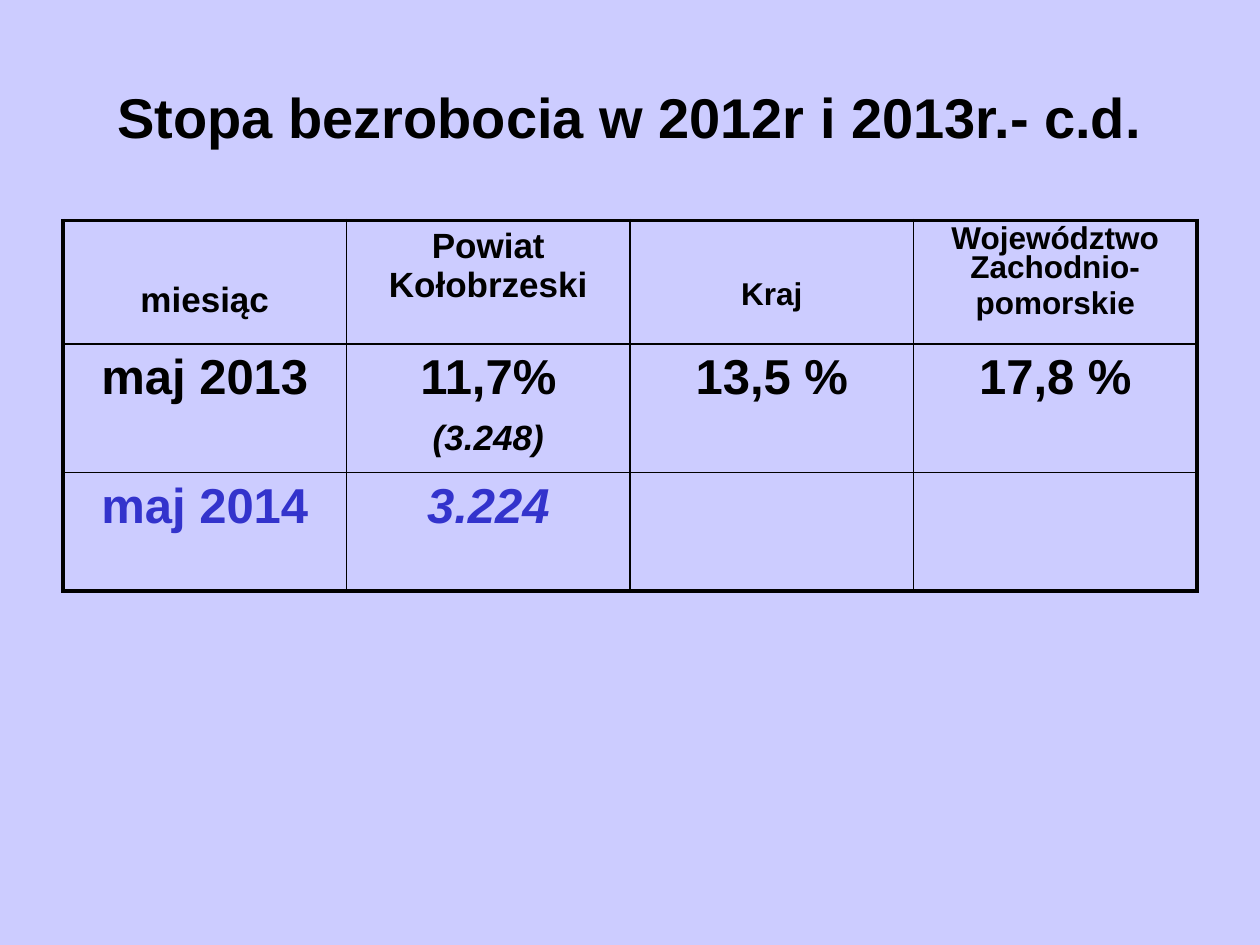
from dataclasses import dataclass

from lxml.etree import SubElement
from pptx import Presentation
from pptx.dml.color import RGBColor
from pptx.enum.text import MSO_ANCHOR, PP_ALIGN
from pptx.oxml.ns import qn
from pptx.util import Inches, Pt


@dataclass(frozen=True)
class Theme:
    font: str = "Arial"
    background: str = "CCCCFF"
    ink: str = "000000"
    accent: str = "3333CC"
    title: int = 32
    figure: int = 28
    label: int = 20
    small_label: int = 18
    outer_line: float = 2.25
    inner_line: float = 1


@dataclass(frozen=True)
class Line:
    text: str
    size: int
    italic: bool = False
    color: str = Theme.ink
    before: float = 8
    spacing: float = 1


THEME = Theme()


def write_lines(text_frame, lines):
    """Fill a text frame with centred bold paragraphs."""
    for index, line in enumerate(lines):
        paragraph = text_frame.paragraphs[0] if index == 0 else text_frame.add_paragraph()
        paragraph.text = line.text
        paragraph.alignment = PP_ALIGN.CENTER
        paragraph.space_before = Pt(line.before)
        paragraph.line_spacing = line.spacing
        font = paragraph.runs[0].font
        font.name = THEME.font
        font.size = Pt(line.size)
        font.bold = True
        font.italic = line.italic
        font.color.rgb = RGBColor.from_string(line.color)


def add_title(slide, text):
    shape = slide.shapes.add_textbox(Inches(0.5), Inches(0.14), Inches(9), Inches(1.57))
    text_frame = shape.text_frame
    text_frame.word_wrap = True
    text_frame.vertical_anchor = MSO_ANCHOR.MIDDLE
    write_lines(text_frame, [Line(text, THEME.title, before=0)])


def set_borders(cell, widths):
    """Draw the cell's sides; widths maps L, R, T, B to points."""
    properties = cell._tc.get_or_add_tcPr()
    for side in "LRTB":
        border = SubElement(properties, qn(f"a:ln{side}"), w=str(Pt(widths[side])))
        fill = SubElement(border, qn("a:solidFill"))
        SubElement(fill, qn("a:srgbClr"), val=THEME.ink)


def add_rate_table(slide, rows, heights, header_tops):
    row_count, column_count = len(rows), len(rows[0])
    table = slide.shapes.add_table(
        row_count, column_count, Inches(0.5), Inches(1.75), Inches(9), Inches(sum(heights))
    ).table
    table.first_row = table.horz_banding = False
    for column in table.columns:
        column.width = Inches(9 / column_count)

    for r, (lines_in_row, height) in enumerate(zip(rows, heights)):
        table.rows[r].height = Inches(height)
        for c, lines in enumerate(lines_in_row):
            cell = table.cell(r, c)
            on_edge = {
                "L": c == 0,
                "R": c == column_count - 1,
                "T": r == 0,
                "B": r == row_count - 1,
            }
            set_borders(cell, {
                side: THEME.outer_line if outer else THEME.inner_line
                for side, outer in on_edge.items()
            })
            cell.fill.background()
            if r == 0:
                cell.margin_top = Inches(header_tops[c])
            write_lines(cell.text_frame, lines)


def main():
    presentation = Presentation()
    presentation.slide_width, presentation.slide_height = Inches(10), Inches(7.5)
    slide = presentation.slides.add_slide(presentation.slide_layouts[6])
    slide.background.fill.solid()
    slide.background.fill.fore_color.rgb = RGBColor.from_string(THEME.background)

    add_title(slide, "Stopa bezrobocia w 2012r i 2013r.- c.d.")

    # Header row, then one row per month
    figure, label, small = THEME.figure, THEME.label, THEME.small_label
    tight = {"before": 4.5, "spacing": 0.81}
    rows = [
        [
            [Line("miesiąc", label)],
            [Line("Powiat Kołobrzeski", label)],
            [Line("Kraj", small)],
            [Line("Województwo Zachodnio-", small, **tight), Line("pomorskie", small, **tight)],
        ],
        [
            [Line("maj 2013", figure)],
            [Line("11,7%", figure), Line("(3.248)", label, italic=True)],
            [Line("13,5 %", figure)],
            [Line("17,8 %", figure)],
        ],
        [
            [Line("maj 2014", figure, color=THEME.accent)],
            [Line("3.224", figure, italic=True, color=THEME.accent)],
            [],
            [],
        ],
    ]
    add_rate_table(slide, rows, heights=[0.98, 1.02, 0.94], header_tops=[0.48, 0.05, 0.45, 0.05])

    presentation.save("out.pptx")


if __name__ == "__main__":
    main()
